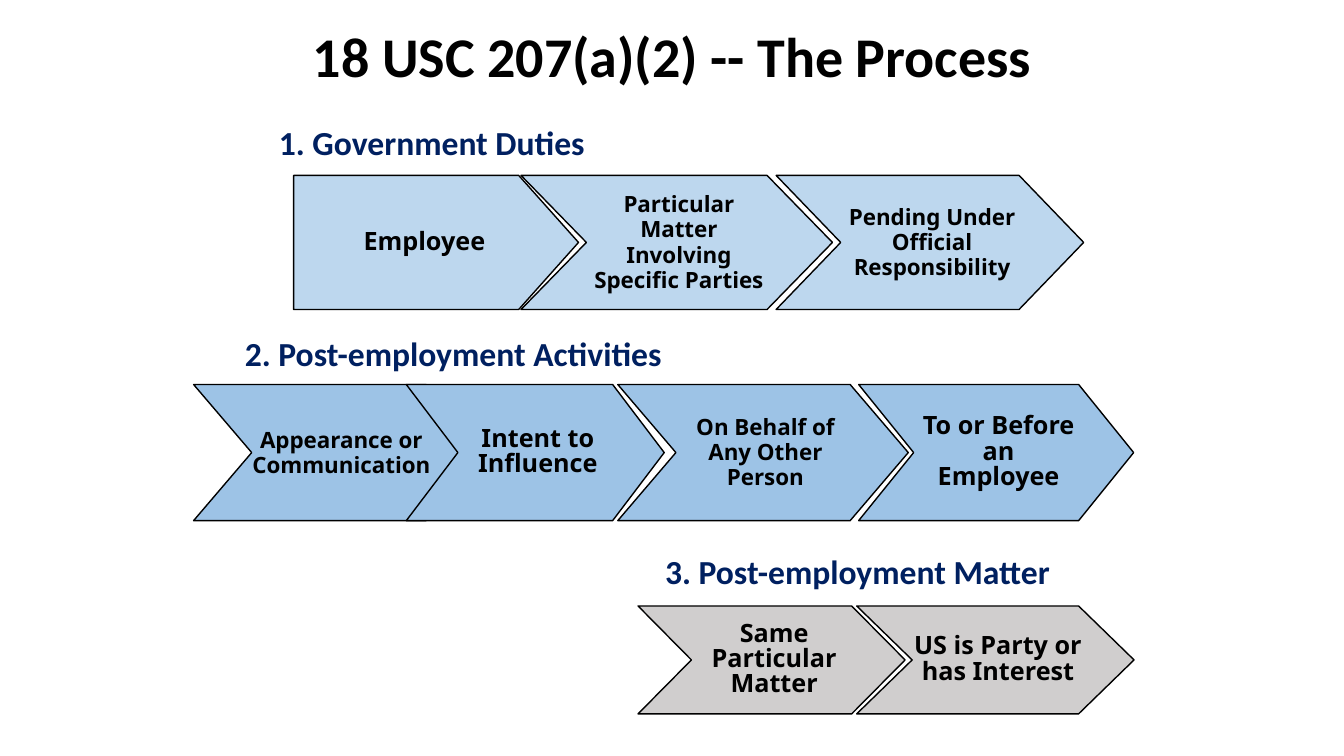
from dataclasses import dataclass

from pptx import Presentation
from pptx.dml.color import RGBColor
from pptx.enum.text import MSO_ANCHOR, MSO_AUTO_SIZE, PP_ALIGN
from pptx.slide import Slide
from pptx.text.text import TextFrame
from pptx.util import Cm, Pt


@dataclass(frozen=True)
class Theme:
    """Colours, fonts and type sizes."""
    ink: str = "000000"
    navy: str = "002060"
    pale_blue: str = "BDD7EE"
    blue: str = "9DC3E6"
    grey: str = "D0CECE"
    head_font: str = "Calibri"
    step_font: str = "Noto Sans"
    title: int = 40
    heading: int = 24
    large: int = 18
    small: int = 16
    leading: int = 18


@dataclass(frozen=True)
class Insets:
    """Text margins of a step, in centimetres."""
    left: float
    right: float
    edge: float


@dataclass(frozen=True)
class Step:
    """One arrow of a process row."""
    text: str
    left: float
    width: float
    size: int
    insets: Insets
    notched: bool = True


@dataclass(frozen=True)
class Heading:
    """A line of heading text and its box."""
    text: str
    left: float
    top: float
    width: float
    height: float = 1.27


@dataclass(frozen=True)
class Row:
    """A headed row of arrows sharing height, fill and tip ratio."""
    heading: Heading
    top: float
    height: float
    tip_ratio: float
    fill: str
    steps: tuple[Step, ...]


T = Theme()
FLAT = Insets(0.2, 0.79, 0.1)
DEEP = Insets(1.63, 1.52, 0.1)
WIDE = Insets(1.57, 1.45, 0.13)
SLIM = Insets(1.37, 1.24, 0.05)

TITLE = Heading("18 USC 207(a)(2) -- The Process", 5.51, 0.43, 22.86, 1.96)
ROWS = (
    Row(Heading("1. Government Duties", 6.78, 2.95, 8.31), 4.42, 3.38, 0.21, T.pale_blue, (
        Step("Employee", 7.4, 7.18, T.large, FLAT, notched=False),
        Step("Particular Matter Involving Specific Parties", 13.13, 7.85, T.small, DEEP),
        Step("Pending Under Official Responsibility", 19.56, 7.75, T.small, DEEP),
    )),
    Row(Heading("2. Post-employment Activities", 5.92, 8.26, 11.15), 9.69, 3.43, 0.2, T.blue, (
        Step("Appearance or Communication", 4.88, 7.32, T.small, SLIM),
        Step("Intent to Influence", 10.24, 6.5, T.large, SLIM),
        Step("On Behalf of Any Other Person", 15.57, 7.32, T.small, WIDE),
        Step("To or Before an Employee", 21.64, 6.93, T.large, WIDE),
    )),
    Row(Heading("3. Post-employment Matter", 16.51, 13.77, 10.36), 15.27, 2.72, 0.2, T.grey, (
        Step("Same Particular Matter", 16.08, 6.73, T.large, SLIM),
        Step("US is Party or has Interest", 21.59, 6.99, T.large, SLIM),
    )),
)


def write(tf: TextFrame, text: str, font: str, size: int, color: str, align: PP_ALIGN) -> None:
    """Fill a text frame with one bold paragraph."""
    tf.text = text
    p = tf.paragraphs[0]
    p.alignment = align
    r = p.runs[0]
    r.font.name = font
    r.font.size = Pt(size)
    r.font.bold = True
    r.font.color.rgb = RGBColor.from_string(color)


def add_heading(s: Slide, h: Heading, size: int, color: str, align: PP_ALIGN, wrap: bool) -> None:
    """Add a text box that grows with its text."""
    tf = s.shapes.add_textbox(Cm(h.left), Cm(h.top), Cm(h.width), Cm(h.height)).text_frame
    tf.word_wrap = wrap
    tf.auto_size = MSO_AUTO_SIZE.SHAPE_TO_FIT_TEXT
    write(tf, h.text, T.head_font, size, color, align)


def add_step(s: Slide, row: Row, step: Step) -> None:
    """Draw one arrow with its label."""
    tip = step.width * row.tip_ratio
    right = step.left + step.width
    middle, bottom = row.top + row.height / 2, row.top + row.height
    points = [(right - tip, row.top), (right, middle), (right - tip, bottom), (step.left, bottom)]
    if step.notched:
        points.append((step.left + tip, middle))
    fb = s.shapes.build_freeform(Cm(step.left), Cm(row.top))
    fb.add_line_segments([(Cm(x), Cm(y)) for x, y in points], close=True)
    sp = fb.convert_to_shape()
    sp.shadow.inherit = False
    sp.fill.solid()
    sp.fill.fore_color.rgb = RGBColor.from_string(row.fill)
    sp.line.color.rgb = RGBColor.from_string(T.ink)
    sp.line.width = Pt(1)
    tf = sp.text_frame
    tf.word_wrap = True
    tf.vertical_anchor = MSO_ANCHOR.MIDDLE
    tf.margin_left, tf.margin_right = Cm(step.insets.left), Cm(step.insets.right)
    tf.margin_top = tf.margin_bottom = Cm(step.insets.edge)
    write(tf, step.text, T.step_font, step.size, T.ink, PP_ALIGN.CENTER)
    tf.paragraphs[0].line_spacing = Pt(T.leading)


def main() -> None:
    """Build and save the slide."""
    prs = Presentation()
    prs.slide_width, prs.slide_height = Cm(33.87), Cm(19.05)
    s = prs.slides.add_slide(prs.slide_layouts[6])
    add_heading(s, TITLE, T.title, T.ink, PP_ALIGN.CENTER, wrap=True)
    for row in ROWS:
        add_heading(s, row.heading, T.heading, T.navy, PP_ALIGN.LEFT, wrap=False)
        for step in row.steps:
            add_step(s, row, step)
    prs.save("out.pptx")


if __name__ == "__main__":
    main()
